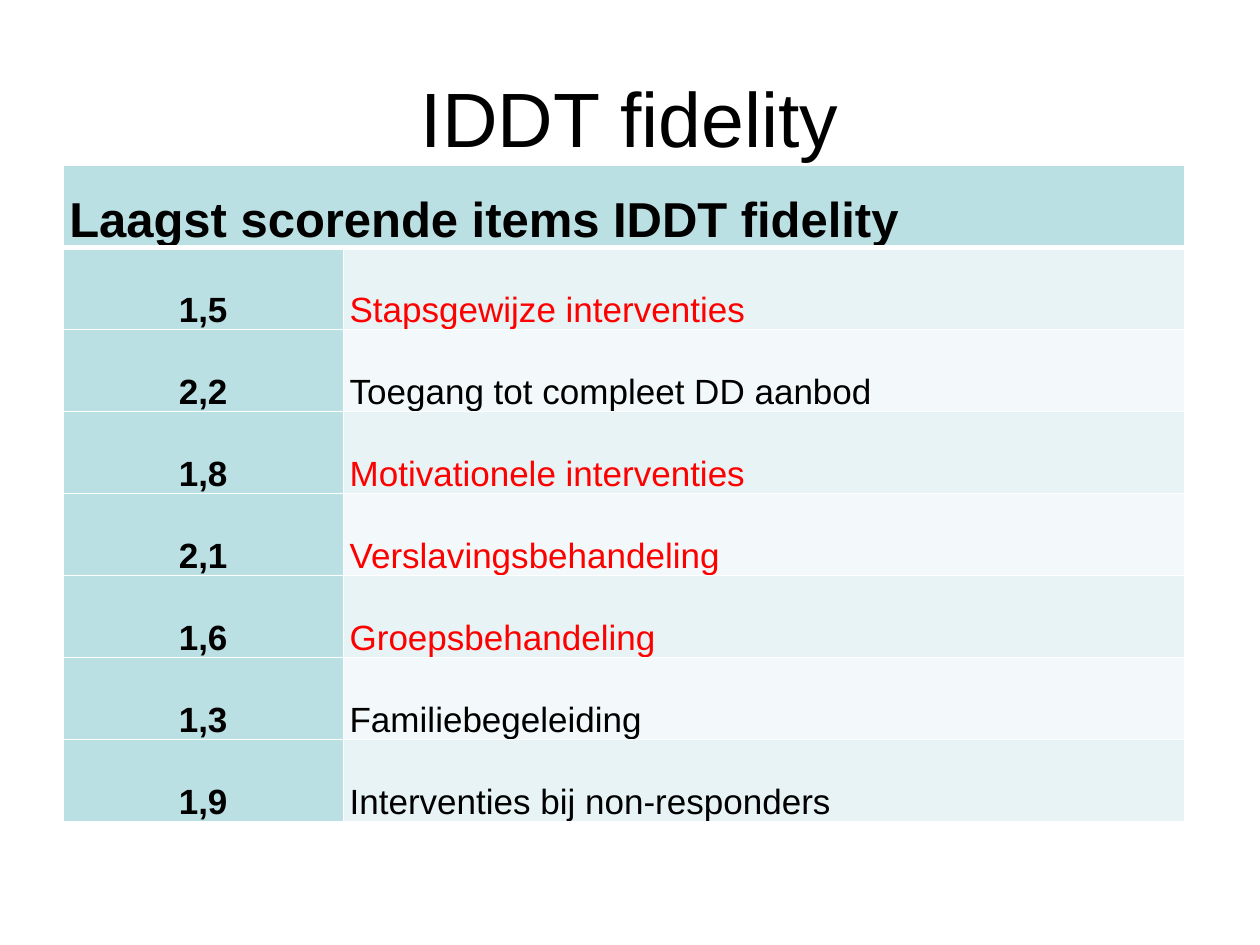
from dataclasses import dataclass

from lxml import etree
from pptx import Presentation
from pptx import util as u
from pptx.dml.color import RGBColor
from pptx.enum import text
from pptx.oxml import ns


@dataclass(frozen=True)
class Theme:
    font: str = "Arial"
    ink: str = "000000"
    accent: str = "FF0000"
    background: str = "FFFFFF"
    border: str = "FFFFFF"
    heading_fill: str = "BBE0E3"
    bands: tuple = ("E7F3F4", "F3F9FA")
    title_size: int = 44
    heading_size: int = 28
    body_size: int = 20
    thin: int = 1
    thick: int = 3


SCORES = [
    ("1,5", "Stapsgewijze interventies", True),
    ("2,2", "Toegang tot compleet DD aanbod", False),
    ("1,8", "Motivationele interventies", True),
    ("2,1", "Verslavingsbehandeling", True),
    ("1,6", "Groepsbehandeling", True),
    ("1,3", "Familiebegeleiding", False),
    ("1,9", "Interventies bij non-responders", False),
]


class SlideBuilder:
    """Holds the theme and the slide; places are shares of the slide's size."""

    def __init__(self, presentation, theme):
        self.theme = theme
        self.slide = presentation.slides.add_slide(presentation.slide_layouts[5])
        self.width = presentation.slide_width
        self.height = presentation.slide_height
        fill = self.slide.background.fill
        fill.solid()
        fill.fore_color.rgb = RGBColor.from_string(theme.background)

    def box(self, left, top, width, height):
        """Turn shares of the slide's size into lengths."""
        return (u.Emu(int(left * self.width)), u.Emu(int(top * self.height)),
                u.Emu(int(width * self.width)), u.Emu(int(height * self.height)))

    def add_text(self, paragraph, words, size, color=None, bold=False,
                 align=text.PP_ALIGN.LEFT, spacing=1.0):
        paragraph.alignment = align
        paragraph.line_spacing = spacing
        run = paragraph.add_run()
        run.text = words
        run.font.name = self.theme.font
        run.font.size = u.Pt(size)
        run.font.bold = bold
        run.font.color.rgb = RGBColor.from_string(color or self.theme.ink)

    def title(self, words, place):
        shape = self.slide.shapes.title
        shape.left, shape.top, shape.width, shape.height = self.box(*place)
        shape.text_frame.vertical_anchor = text.MSO_ANCHOR.MIDDLE
        self.add_text(shape.text_frame.paragraphs[0], words, self.theme.title_size,
                      align=text.PP_ALIGN.CENTER)

    def cell(self, cell, words, fill, size, top=None, bottom=None, **style):
        """Fill one cell; top and bottom override the thin border width."""
        thin = self.theme.thin
        properties = cell._tc.get_or_add_tcPr()
        edges = {"L": thin, "R": thin, "T": top or thin, "B": bottom or thin}
        for side, points in edges.items():
            line = etree.SubElement(properties, ns.qn(f"a:ln{side}"), w=str(u.Pt(points)))
            solid = etree.SubElement(line, ns.qn("a:solidFill"))
            etree.SubElement(solid, ns.qn("a:srgbClr"), val=self.theme.border)
        cell.fill.solid()
        cell.fill.fore_color.rgb = RGBColor.from_string(fill)
        cell.margin_left = cell.margin_right = u.Inches(0.05)
        cell.margin_top = cell.margin_bottom = 0
        cell.vertical_anchor = text.MSO_ANCHOR.BOTTOM
        if words:
            self.add_text(cell.text_frame.paragraphs[0], words, size, **style)

    def score_table(self, heading, scores, place):
        theme = self.theme
        left, top, width, height = self.box(*place)
        table = self.slide.shapes.add_table(
            len(scores) + 1, 2, left, top, width, height).table
        table.columns[0].width = width // 4
        table.columns[1].width = width - width // 4

        table.cell(0, 0).merge(table.cell(0, 1))
        for column, words in enumerate((heading, "")):
            self.cell(table.cell(0, column), words, theme.heading_fill,
                      theme.heading_size, bottom=theme.thick, bold=True)

        for row, (score, item, marked) in enumerate(scores, start=1):
            edge = theme.thick if row == 1 else theme.thin
            self.cell(table.cell(row, 0), score, theme.heading_fill, theme.body_size,
                      top=edge, bold=True, align=text.PP_ALIGN.CENTER, spacing=1.15)
            self.cell(table.cell(row, 1), item, theme.bands[(row - 1) % 2],
                      theme.body_size, top=edge, spacing=1.15,
                      color=theme.accent if marked else theme.ink)


def main():
    presentation = Presentation()
    presentation.slide_width = u.Inches(10)
    presentation.slide_height = u.Inches(7.5)
    builder = SlideBuilder(presentation, Theme())
    builder.title("IDDT fidelity", (0.05, 0.04, 0.9, 1 / 6))
    builder.score_table("Laagst scorende items IDDT fidelity", SCORES,
                        (0.05, 0.175, 0.89, 0.695))
    presentation.save("out.pptx")


if __name__ == "__main__":
    main()
